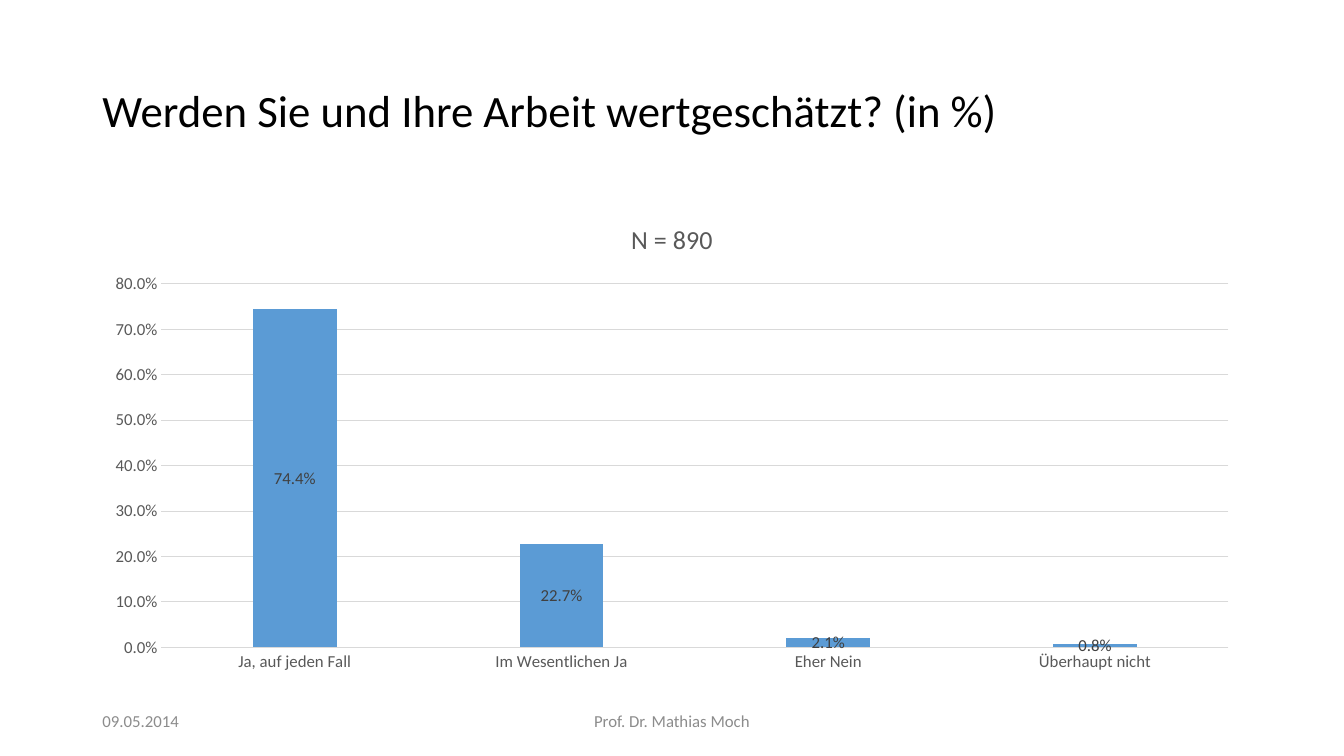
"""Builds the survey slide on appreciation at work with a column chart."""
from pptx import Presentation
from pptx import util as u
from pptx.chart.data import CategoryChartData
from pptx.dml.color import RGBColor
from pptx.enum import chart as ch, text

TITLE = "Werden Sie und Ihre Arbeit wertgeschätzt? (in %)"
DATE = "09.05.2014"
AUTHOR = "Prof. Dr. Mathias Moch"
CHART_TITLE = "N = 890"
ANSWERS = {
    "Ja, auf jeden Fall": 0.744,
    "Im Wesentlichen Ja": 0.227,
    "Eher Nein": 0.021,
    "Überhaupt nicht": 0.008,
}
FONT = "Calibri"
PERCENT = "0.0%"
BLACK = RGBColor(0x00, 0x00, 0x00)
GREY = RGBColor(0x8C, 0x8C, 0x8C)
AXIS_GREY = RGBColor(0x59, 0x59, 0x59)
LABEL_GREY = RGBColor(0x40, 0x40, 0x40)
GRID_GREY = RGBColor(0xD9, 0xD9, 0xD9)
BLUE = RGBColor(0x5B, 0x9B, 0xD5)

WIDTH, HEIGHT = u.Cm(33.87), u.Cm(19.05)
MARGIN = u.Cm(2.33)
CONTENT_W = WIDTH - 2 * MARGIN
FOOTER_TOP, FOOTER_H = u.Cm(17.66), u.Cm(1.01)
AUTHOR_W = u.Cm(11.43)


def style(font, size, color):
    font.name = FONT
    font.size = u.Pt(size)
    font.bold = False
    font.color.rgb = color


def style_line(line):
    line.color.rgb = GRID_GREY
    line.width = u.Pt(0.75)


def add_text(s, box, content, size, color, align=text.PP_ALIGN.LEFT):
    tf = s.shapes.add_textbox(*box).text_frame
    tf.word_wrap = True
    tf.vertical_anchor = text.MSO_ANCHOR.MIDDLE
    tf.text = content
    p = tf.paragraphs[0]
    p.alignment = align
    style(p.runs[0].font, size, color)
    return p


def add_answers_chart(s):
    data = CategoryChartData(number_format=PERCENT)
    data.categories = list(ANSWERS)
    data.add_series("Series 1", list(ANSWERS.values()))
    chart = s.shapes.add_chart(
        ch.XL_CHART_TYPE.COLUMN_CLUSTERED,
        MARGIN, u.Cm(5.07), CONTENT_W, u.Cm(12.09), data).chart
    style(chart.font, 10, BLACK)
    chart.has_legend = False
    chart.has_title = True
    tf = chart.chart_title.text_frame
    tf.text = CHART_TITLE
    style(tf.paragraphs[0].runs[0].font, 18.6, AXIS_GREY)

    for axis in (chart.category_axis, chart.value_axis):
        axis.major_tick_mark = axis.minor_tick_mark = ch.XL_TICK_MARK.NONE
        style(axis.tick_labels.font, 12, AXIS_GREY)
    style_line(chart.category_axis.format.line)
    values = chart.value_axis
    values.minimum_scale, values.maximum_scale, values.major_unit = 0, 0.8, 0.1
    values.format.line.fill.background()
    style_line(values.major_gridlines.format.line)
    values.tick_labels.number_format = PERCENT
    values.tick_labels.number_format_is_linked = False

    plot = chart.plots[0]
    plot.gap_width, plot.overlap = 219, -27
    plot.vary_by_categories = False
    fill = plot.series[0].format.fill
    fill.solid()
    fill.fore_color.rgb = BLUE
    labels = plot.series[0].data_labels
    labels.show_value = True
    labels.position = ch.XL_LABEL_POSITION.CENTER
    labels.number_format = PERCENT
    labels.number_format_is_linked = False
    style(labels.font, 12, LABEL_GREY)


def main():
    prs = Presentation()
    prs.slide_width, prs.slide_height = WIDTH, HEIGHT
    s = prs.slides.add_slide(prs.slide_layouts[6])
    title = add_text(s, (MARGIN, u.Cm(1.01), CONTENT_W, u.Cm(3.68)), TITLE, 32, BLACK)
    title.line_spacing = 0.9
    add_answers_chart(s)
    add_text(s, (MARGIN, FOOTER_TOP, u.Cm(7.62), FOOTER_H), DATE, 12, GREY)
    add_text(s, ((WIDTH - AUTHOR_W) // 2, FOOTER_TOP, AUTHOR_W, FOOTER_H),
             AUTHOR, 12, GREY, text.PP_ALIGN.CENTER)
    prs.save("out.pptx")


if __name__ == "__main__":
    main()
